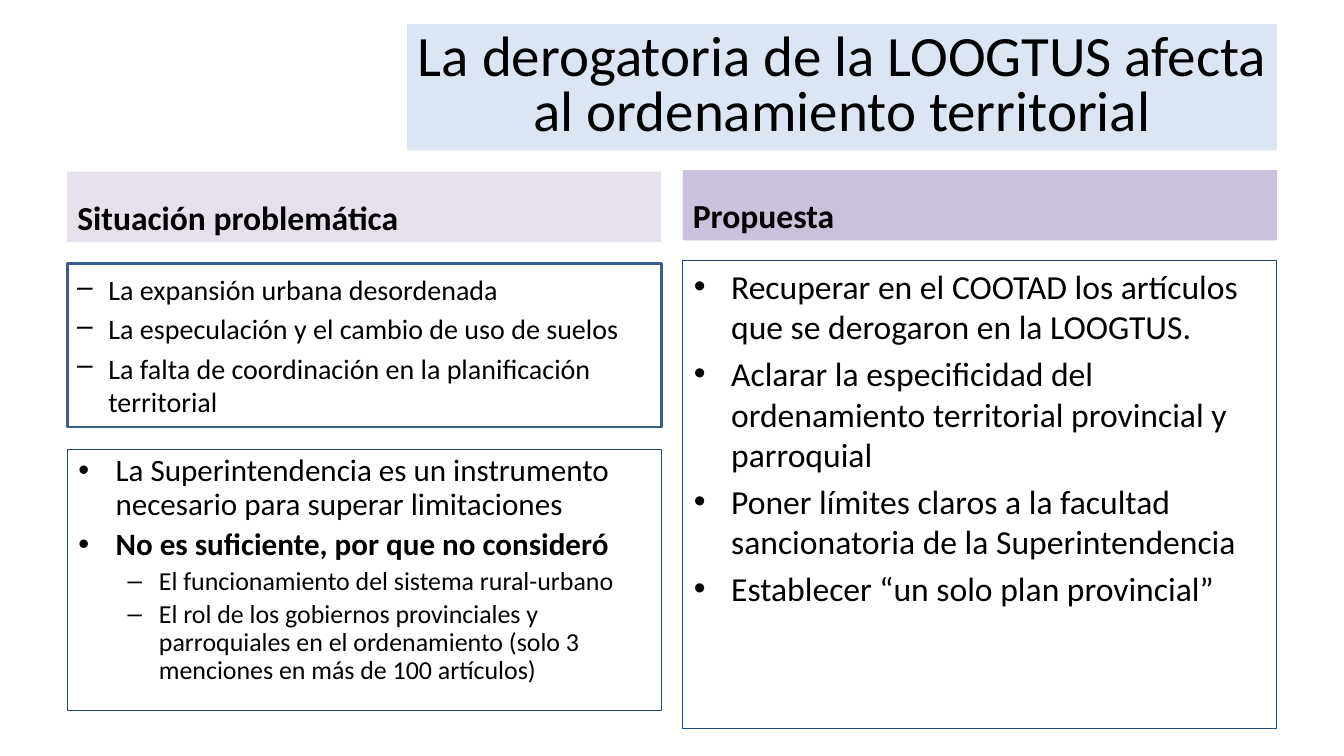
import pptx
import pptx.util
import pptx.dml.color
import pptx.enum.shapes
import pptx.enum.text
import lxml.etree

Pt = pptx.util.Pt
Inches = pptx.util.Inches
Anchor = pptx.enum.text.MSO_ANCHOR
Align = pptx.enum.text.PP_ALIGN

deck = pptx.Presentation()
deck.slide_width = Inches(13.33)
deck.slide_height = Inches(7.5)
wide = deck.slide_width / 100
high = deck.slide_height / 100
slide = deck.slides.add_slide(deck.slide_layouts[4])


def color(code):
    return pptx.dml.color.RGBColor.from_string(code)


def bullet(para, mark, left, hang):
    props = para._p.get_or_add_pPr()
    props.set("marL", str(Inches(left)))
    props.set("indent", str(-Inches(hang)))
    tint = lxml.etree.SubElement(props, pptx.oxml.ns.qn("a:buClr"))
    lxml.etree.SubElement(tint, pptx.oxml.ns.qn("a:srgbClr"), val="000000")
    lxml.etree.SubElement(props, pptx.oxml.ns.qn("a:buChar"), char=mark)


title = slide.shapes.title
left_head, left_body, right_head, right_body = [
    slide.placeholders[n] for n in (1, 2, 3, 4)
]
issues = slide.shapes.add_shape(
    pptx.enum.shapes.MSO_SHAPE.RECTANGLE, 0, 0, Inches(1), Inches(1)
)
issues.shadow.inherit = False

col = 44.2
left = 5
right = 95 - col

dot = ("•", 0.38, 0.37, 4.8)
dash = ("–", 0.31, 0.31, 4)
sub = ("–", 0.81, 0.31, 4)

boxes = [
    (title, 30.3, 3.2, 64.7, 16.7, "DCE6F2", None, Anchor.MIDDLE, 0.8, [
        ("La derogatoria de la LOOGTUS afecta al ordenamiento territorial", None, 40.7, False),
    ]),
    (left_head, left, 22.7, col, 9.3, "E6E0EC", None, Anchor.BOTTOM, 1, [
        ("Situación problemática", None, 24, True),
    ]),
    (right_head, right, 22.5, col, 9.3, "CCC1DA", None, Anchor.BOTTOM, 1, [
        ("Propuesta", None, 24, True),
    ]),
    (issues, left, 34.9, col, 21.6, "FFFFFF", ("3A5F8C", 2), Anchor.MIDDLE, 1, [
        ("La expansión urbana desordenada", dash, 20, False),
        ("La especulación y el cambio de uso de suelos", dash, 20, False),
        ("La falta de coordinación en la planificación territorial", dash, 20, False),
    ]),
    (left_body, left, 59.5, col, 34.5, None, ("1F497D", 0.75), Anchor.TOP, 0.9, [
        ("La Superintendencia es un instrumento necesario para superar limitaciones", dot, 22.2, False),
        ("No es suficiente, por que no consideró", dot, 22.2, True),
        ("El funcionamiento del sistema rural-urbano", sub, 18.5, False),
        ("El rol de los gobiernos provinciales y parroquiales en el ordenamiento "
         "(solo 3 menciones en más de 100 artículos)", sub, 18.5, False),
    ]),
    (right_body, right, 34.5, col, 61.9, None, ("1F497D", 0.75), Anchor.TOP, 1, [
        ("Recuperar en el COOTAD los artículos que se derogaron en la LOOGTUS.", dot, 24, False),
        ("Aclarar la especificidad del ordenamiento territorial provincial y parroquial", dot, 24, False),
        ("Poner límites claros a la facultad sancionatoria de la Superintendencia", dot, 24, False),
        ("Establecer “un solo plan provincial”", dot, 24, False),
    ]),
]

for box, x, y, w, h, fill, line, anchor, pitch, items in boxes:
    box.left, box.width = int(x * wide), int(w * wide)
    box.top, box.height = int(y * high), int(h * high)
    if fill:
        box.fill.solid()
        box.fill.fore_color.rgb = color(fill)
    else:
        box.fill.background()
    if line:
        box.line.color.rgb = color(line[0])
        box.line.width = Pt(line[1])
    else:
        box.line.fill.background()
    frame = box.text_frame
    frame.word_wrap = True
    frame.auto_size = pptx.enum.text.MSO_AUTO_SIZE.NONE
    frame.vertical_anchor = anchor
    for row, (words, style, size, bold) in enumerate(items):
        para = frame.add_paragraph() if row else frame.paragraphs[0]
        para.text = words
        if style:
            bullet(para, *style[:3])
        if style is sub:
            para.level = 1
        para.alignment = Align.CENTER if box is title else Align.LEFT
        para.line_spacing = float(pitch)
        para.space_before = Pt(style[3] if row else 0)
        font = para.runs[0].font
        font.name = "Calibri"
        font.size = Pt(size)
        font.bold = bold
        font.color.rgb = color("000000")

deck.save("out.pptx")
